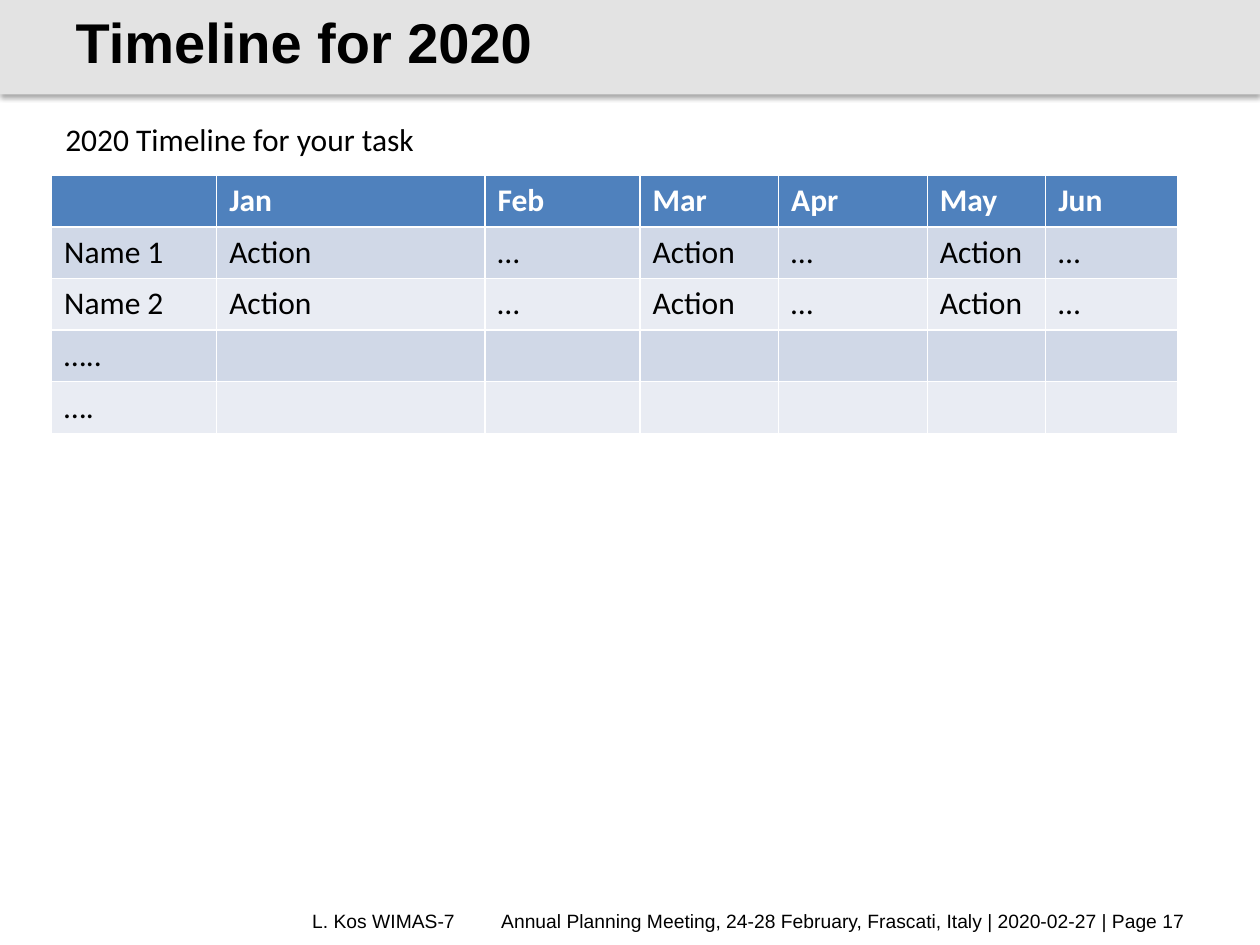
from lxml.etree import SubElement
from pptx import Presentation
from pptx.dml.color import RGBColor
from pptx.enum.shapes import MSO_SHAPE
from pptx.enum.text import MSO_ANCHOR, MSO_AUTO_SIZE, PP_ALIGN
from pptx.oxml import parse_xml
from pptx.oxml.ns import nsdecls, qn
from pptx.util import Inches, Pt

BLACK = RGBColor(0x00, 0x00, 0x00)
WHITE = RGBColor(0xFF, 0xFF, 0xFF)
GREY = RGBColor(0xE3, 0xE3, 0xE3)
BLUE = RGBColor(0x4F, 0x81, 0xBD)
BANDS = [RGBColor(0xE9, 0xEC, 0xF3), RGBColor(0xD0, 0xD8, 0xE7)]

COLS = [1.31, 2.13, 1.23, 1.1, 1.18, 0.94, 1.05]
ROW = 0.41
ACTIONS = ["Action", "…"] * 3
ROWS = [
    ["", "Jan", "Feb", "Mar", "Apr", "May", "Jun"],
    ["Name 1", *ACTIONS],
    ["Name 2", *ACTIONS],
    ["….."] + [""] * 6,
    ["…."] + [""] * 6,
]


def style(frame, size, name, color=BLACK, bold=False):
    for par in frame.paragraphs:
        for run in par.runs:
            font = run.font
            font.size, font.name, font.bold = Pt(size), name, bold
            font.color.rgb = color


def add_text(slide, box, text, size, name):
    frame = slide.shapes.add_textbox(*map(Inches, box)).text_frame
    frame.word_wrap = True
    frame.text = text
    style(frame, size, name)
    return frame


def add_header(slide, box, text):
    left, top, width, height = box
    band = slide.shapes.add_shape(MSO_SHAPE.RECTANGLE, *map(Inches, box))
    band.fill.solid()
    band.fill.fore_color.rgb = GREY
    band.line.fill.background()
    band.shadow.inherit = False
    band._element.spPr.find(qn("a:effectLst")).append(parse_xml(
        f'<a:outerShdw {nsdecls("a")} blurRad="{Pt(3.1)}" dist="{Pt(1.8)}" '
        'dir="5400000" rotWithShape="0"><a:srgbClr val="000000">'
        '<a:alpha val="35000"/></a:srgbClr></a:outerShdw>'))

    title = slide.shapes.title
    band._element.addnext(title._element)
    title.left, title.top = Inches(left + 0.5), Inches(top + 0.08)
    title.width, title.height = Inches(width - 1.75), Inches(height - 0.25)
    frame = title.text_frame
    frame.text = text
    frame.auto_size = MSO_AUTO_SIZE.NONE
    frame.vertical_anchor = MSO_ANCHOR.MIDDLE
    frame.paragraphs[0].alignment = PP_ALIGN.LEFT
    style(frame, 32, "Arial", bold=True)


def add_border(cell, color, width):
    props = cell._tc.get_or_add_tcPr()
    for side in ("lnL", "lnR", "lnT", "lnB"):
        line = SubElement(props, qn(f"a:{side}"), w=str(Pt(width)))
        fill = SubElement(line, qn("a:solidFill"))
        SubElement(fill, qn("a:srgbClr"), val=str(color))


def add_plan(slide, left, top):
    """Add the month table with its top left corner at the given point."""
    box = (left, top, sum(COLS), ROW * len(ROWS))
    table = slide.shapes.add_table(
        len(ROWS), len(COLS), *map(Inches, box)).table
    for col, width in zip(table.columns, COLS):
        col.width = Inches(width)
    for i, row in enumerate(ROWS):
        table.rows[i].height = Inches(ROW)
        head = i == 0
        for j, text in enumerate(row):
            cell = table.cell(i, j)
            add_border(cell, WHITE, 0.96)
            cell.fill.solid()
            cell.fill.fore_color.rgb = BLUE if head else BANDS[i % 2]
            cell.text = text
            style(cell.text_frame, 18, "Calibri",
                  WHITE if head else BLACK, head)


def add_footer(slide, box, author, event, stop):
    """Add the author, then the event at a tab stop."""
    frame = add_text(slide, box, f"{author}\t{event}", 11, "Arial")
    frame.vertical_anchor = MSO_ANCHOR.MIDDLE
    frame.margin_right = 0
    props = frame.paragraphs[0]._p.get_or_add_pPr()
    tabs = SubElement(props, qn("a:tabLst"))
    SubElement(tabs, qn("a:tab"), pos=str(Inches(stop)), algn="l")


def main():
    deck = Presentation()
    deck.slide_width, deck.slide_height = Inches(10), Inches(7.5)
    slide = deck.slides.add_slide(deck.slide_layouts[5])
    add_header(slide, (0, 0, 10, 0.75), "Timeline for 2020")
    add_text(slide, (0.42, 0.9, 7.4, 0.4),
             "2020 Timeline for your task", 18, "Calibri")
    add_plan(slide, 0.41, 1.39)
    add_footer(slide, (2.38, 7.16, 7.14, 0.29), "L. Kos WIMAS-7",
               "Annual Planning Meeting, 24-28 February, Frascati, Italy"
               " | 2020-02-27 | Page 17", 1.5)
    deck.save("out.pptx")


if __name__ == "__main__":
    main()
